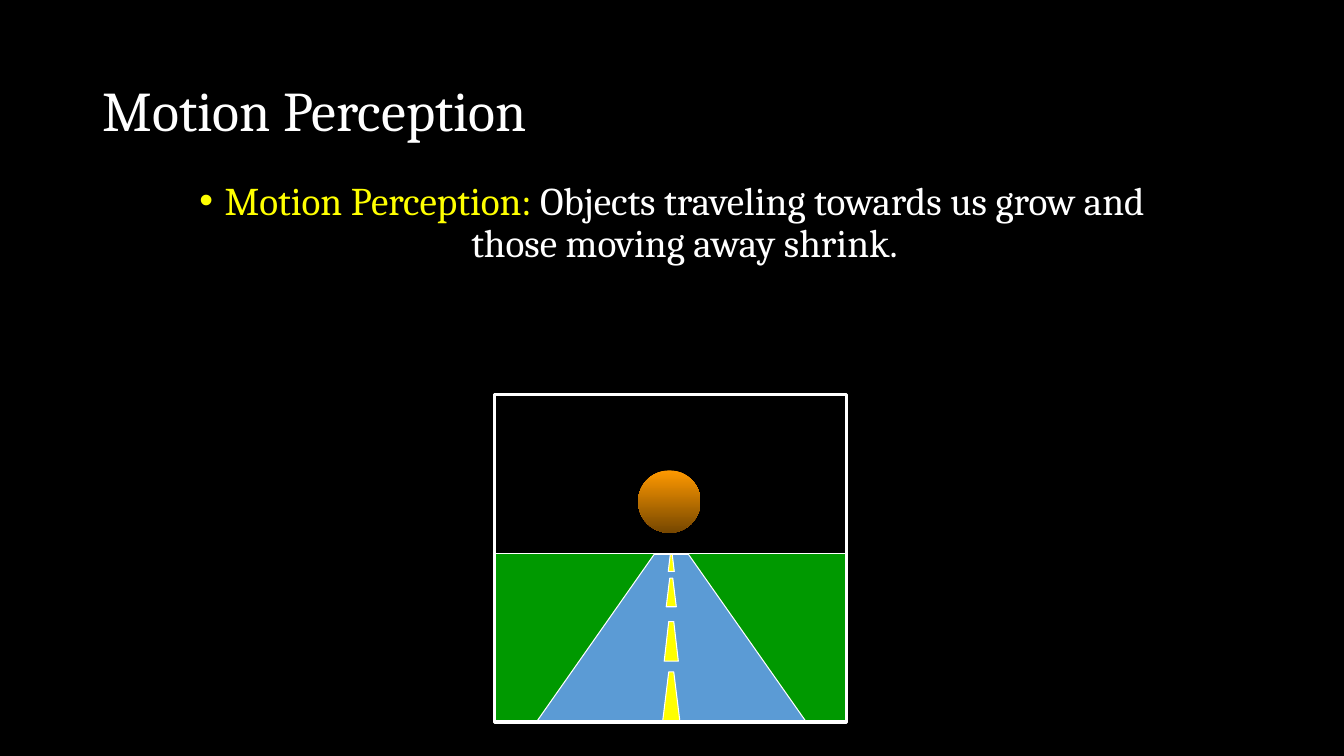
import pptx
import pptx.util
import pptx.dml.color
import pptx.enum.shapes
import pptx.enum.text
import pptx.oxml.ns
import lxml.etree

Pt = pptx.util.Pt
RGB = pptx.dml.color.RGBColor.from_string
SHAPE = pptx.enum.shapes.MSO_SHAPE
ALIGN = pptx.enum.text.PP_ALIGN
ANCHOR = pptx.enum.text.MSO_ANCHOR

COLORS = {
    "night": "000000",
    "white": "FFFFFF",
    "yellow": "FFFF00",
    "grass": "009900",
    "road": "5B9BD5",
    "ball_top": "FF9900",
    "ball_bottom": "764700",
}


def style(sp, fill, line_width):
    sp.shadow.inherit = False
    if fill:
        sp.fill.solid()
        sp.fill.fore_color.rgb = RGB(COLORS[fill])
    else:
        sp.fill.background()
    sp.line.color.rgb = RGB(COLORS["white"])
    sp.line.width = Pt(line_width)


def add_trapezoid(s, top_left, top_right, top, bottom_left, bottom_right, bottom, fill):
    fb = s.shapes.build_freeform(Pt(top_left), Pt(top), scale=1.0)
    corners = [(top_right, top), (bottom_right, bottom), (bottom_left, bottom)]
    fb.add_line_segments([(Pt(x), Pt(y)) for x, y in corners], close=True)
    style(fb.convert_to_shape(), fill, 0.75)


prs = pptx.Presentation()
prs.slide_width, prs.slide_height = Pt(960), Pt(540)
s = prs.slides.add_slide(prs.slide_layouts[5])
s.background.fill.solid()
s.background.fill.fore_color.rgb = RGB(COLORS["night"])

# Title
title = s.shapes.title
title.left, title.top, title.width, title.height = Pt(66), Pt(28.75), Pt(828), Pt(104.4)
tf = title.text_frame
tf.vertical_anchor = ANCHOR.MIDDLE
p = tf.paragraphs[0]
p.text = "Motion Perception"
p.alignment = ALIGN.LEFT
p.line_spacing = 0.9
p.font.name, p.font.size = "Cambria", Pt(40)
p.font.color.rgb = RGB(COLORS["white"])

# Definition
tf = s.shapes.add_textbox(Pt(132.5), Pt(126), Pt(694.8), Pt(185)).text_frame
tf.word_wrap = True
p = tf.paragraphs[0]
p.alignment = ALIGN.CENTER
p.line_spacing = 0.9
p.space_before = Pt(10)
p.font.name, p.font.size = "Cambria", Pt(28)
for text, color in [
    ("Motion Perception: ", "yellow"),
    ("Objects traveling towards us grow and those moving away shrink.", "white"),
]:
    r = p.add_run()
    r.text = text
    r.font.color.rgb = RGB(COLORS[color])
pPr = p._p.get_or_add_pPr()
pPr.set("marL", str(Pt(18)))
pPr.set("indent", str(-Pt(18)))
bullet_font = lxml.etree.Element(pptx.oxml.ns.qn("a:buFont"), typeface="Arial")
bullet = lxml.etree.Element(pptx.oxml.ns.qn("a:buChar"), char="•")
at = pPr.index(pPr.find(pptx.oxml.ns.qn("a:defRPr")))
pPr[at:at] = [bullet_font, bullet]

# Grass and scene frame
grass = s.shapes.add_shape(SHAPE.RECTANGLE, Pt(353), Pt(395.5), Pt(252), Pt(119.5))
style(grass, "grass", 0.75)
frame = s.shapes.add_shape(SHAPE.RECTANGLE, Pt(353), Pt(282), Pt(252), Pt(234))
style(frame, None, 2.25)

# Ball
ball = s.shapes.add_shape(SHAPE.OVAL, Pt(455.8), Pt(336), Pt(44.6), Pt(44.6))
ball.shadow.inherit = False
ball.line.fill.background()
ball.fill.gradient()
ball.fill.gradient_angle = 270
for stop, color in zip(ball.fill.gradient_stops, ["ball_top", "ball_bottom"]):
    stop.color.rgb = RGB(COLORS[color])

# Road, then its centre dashes from near to far
add_trapezoid(s, 467.3, 491.8, 396, 383.8, 575.3, 514.8, "road")
dash_center = 479.5
for top, bottom, top_width, bottom_width in [
    (480, 514.8, 3.6, 12.2),
    (444, 472.3, 3.6, 10.1),
    (413, 433.4, 2.2, 7.2),
    (396, 408.2, 1.4, 4.3),
]:
    add_trapezoid(
        s,
        dash_center - top_width / 2, dash_center + top_width / 2, top,
        dash_center - bottom_width / 2, dash_center + bottom_width / 2, bottom,
        "yellow",
    )

prs.save("out.pptx")
